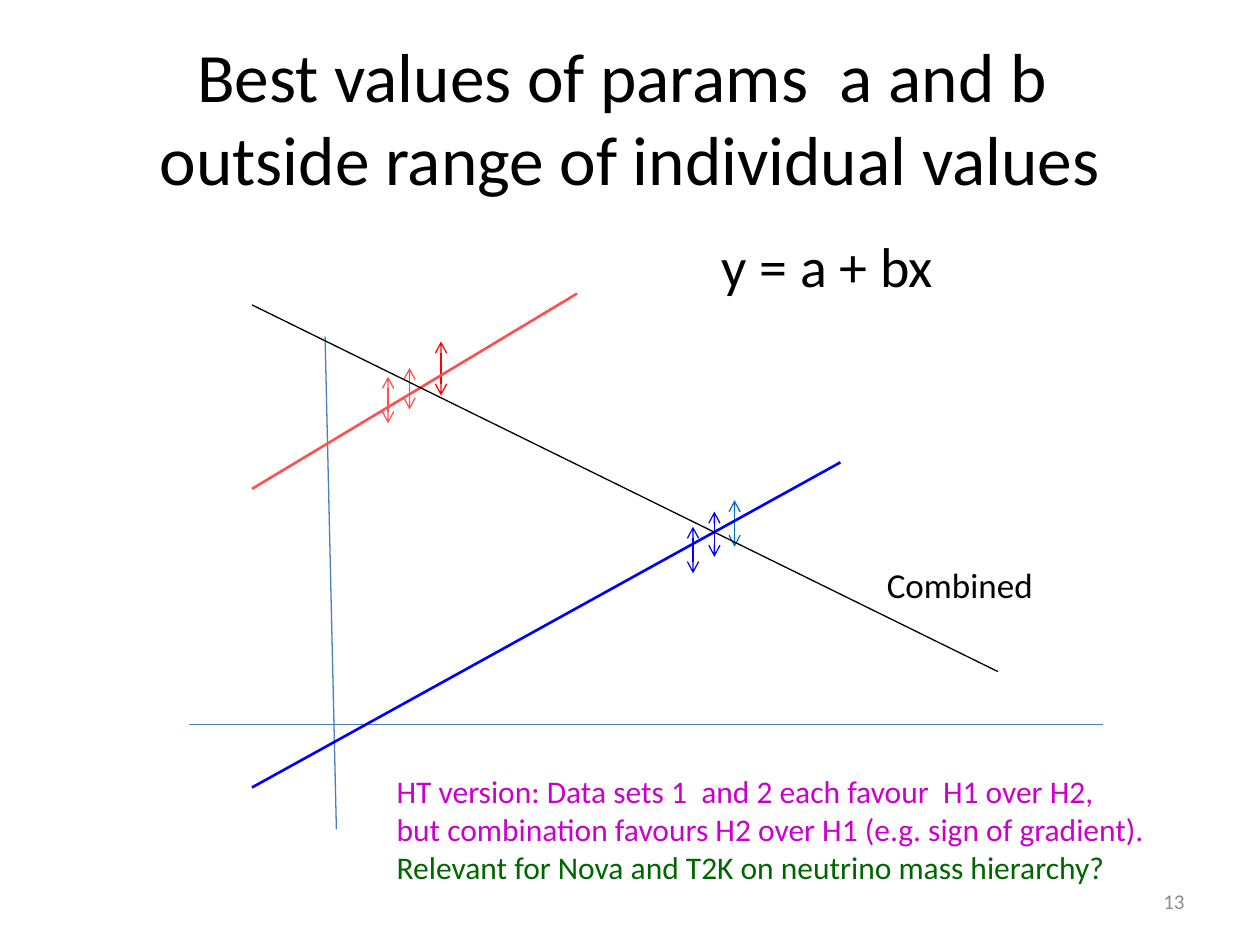
from lxml import etree
from pptx import Presentation
from pptx.dml.color import RGBColor
from pptx.enum.shapes import MSO_CONNECTOR
from pptx.enum.text import MSO_ANCHOR, PP_ALIGN
from pptx.oxml.ns import qn
from pptx.util import Inches, Pt

STRAIGHT = MSO_CONNECTOR.STRAIGHT
TOP, MIDDLE = MSO_ANCHOR.TOP, MSO_ANCHOR.MIDDLE
LEFT, CENTER, RIGHT = PP_ALIGN.LEFT, PP_ALIGN.CENTER, PP_ALIGN.RIGHT

COLORS = {
    "black": "000000",
    "gray": "8C8C8C",
    "axis": "4B7EBC",
    "coral": "FF5050",
    "red": "FF0000",
    "blue": "0000FF",
    "azure": "0070C0",
    "magenta": "CC00CC",
    "green": "006600",
}


class SlideBuilder:
    """Holds the style and the current slide, and adds text and lines to it."""

    font_name = "Calibri"

    def __init__(self, slide):
        self.slide = slide

    def text(self, box, paragraphs, size, align=LEFT, anchor=TOP):
        frame = self.slide.shapes.add_textbox(*map(Inches, box)).text_frame
        frame.word_wrap = True
        frame.vertical_anchor = anchor
        for index, (wording, color) in enumerate(paragraphs):
            paragraph = frame.paragraphs[0] if index == 0 else frame.add_paragraph()
            paragraph.text = wording
            paragraph.alignment = align
            for run in paragraph.runs:
                font_format = {"name": self.font_name, "size": Pt(size)}
                for attribute, value in font_format.items():
                    setattr(run.font, attribute, value)
                run.font.color.rgb = RGBColor.from_string(COLORS[color])

    def line(self, start, end, color, width=0.75):
        connector = self.slide.shapes.add_connector(
            STRAIGHT, *map(Inches, (*start, *end))
        )
        connector.line.width = Pt(width)
        connector.line.color.rgb = RGBColor.from_string(COLORS[color])
        properties = connector.element.find(qn("p:spPr"))
        etree.SubElement(properties, qn("a:effectLst"))
        return connector

    def error_bar(self, x, top, bottom, color):
        bar = self.line((x, top), (x, bottom), color)
        outline = bar.element.find(qn("p:spPr")).find(qn("a:ln"))
        for end in ("a:headEnd", "a:tailEnd"):
            etree.SubElement(outline, qn(end), type="arrow")


def main():
    presentation = Presentation()
    presentation.slide_width = Inches(10)
    presentation.slide_height = Inches(7.5)
    builder = SlideBuilder(presentation.slides.add_slide(presentation.slide_layouts[6]))

    title = "Best values of params  a and b \voutside range of individual values"
    builder.text((0.5, 0.3, 9, 1.25), [(title, "black")], 39.6, CENTER, MIDDLE)
    builder.text((5.63, 1.79, 3, 0.64), [("y = a + bx", "black")], 32)
    builder.text((6.94, 4.42, 2, 0.44), [("Combined", "black")], 20)
    builder.text((7.17, 6.95, 2.33, 0.4), [("13", "gray")], 12, RIGHT, MIDDLE)

    axes = [((2.58, 2.67), (2.67, 6.58)), ((1.5, 5.75), (8.75, 5.75))]
    for start, end in axes:
        builder.line(start, end, "axis")

    measurements = [
        (3.25, 2.92, 3.25, "coral"),
        (3.5, 2.71, 3.14, "red"),
        (3.08, 2.99, 3.36, "coral"),
        (5.5, 4.18, 4.55, "blue"),
        (5.67, 4.06, 4.42, "blue"),
        (5.83, 3.97, 4.34, "azure"),
    ]
    for measurement in measurements:
        builder.error_bar(*measurement)

    fits = [
        ((4.58, 2.33), (2, 3.88), "coral", 1.5),
        ((6.67, 3.67), (2, 6.25), "blue", 1.5),
        ((2, 2.42), (7.92, 5.33), "black", 0.75),
    ]
    for fit in fits:
        builder.line(*fit)

    remarks = [
        ("HT version: Data sets 1  and 2 each favour  H1 over H2,", "magenta"),
        ("but combination favours H2 over H1 (e.g. sign of gradient).", "magenta"),
        ("Relevant for Nova and T2K on neutrino mass hierarchy?", "green"),
    ]
    builder.text((3.05, 6.08, 6.53, 1.01), remarks, 18)

    presentation.save("out.pptx")


if __name__ == "__main__":
    main()
